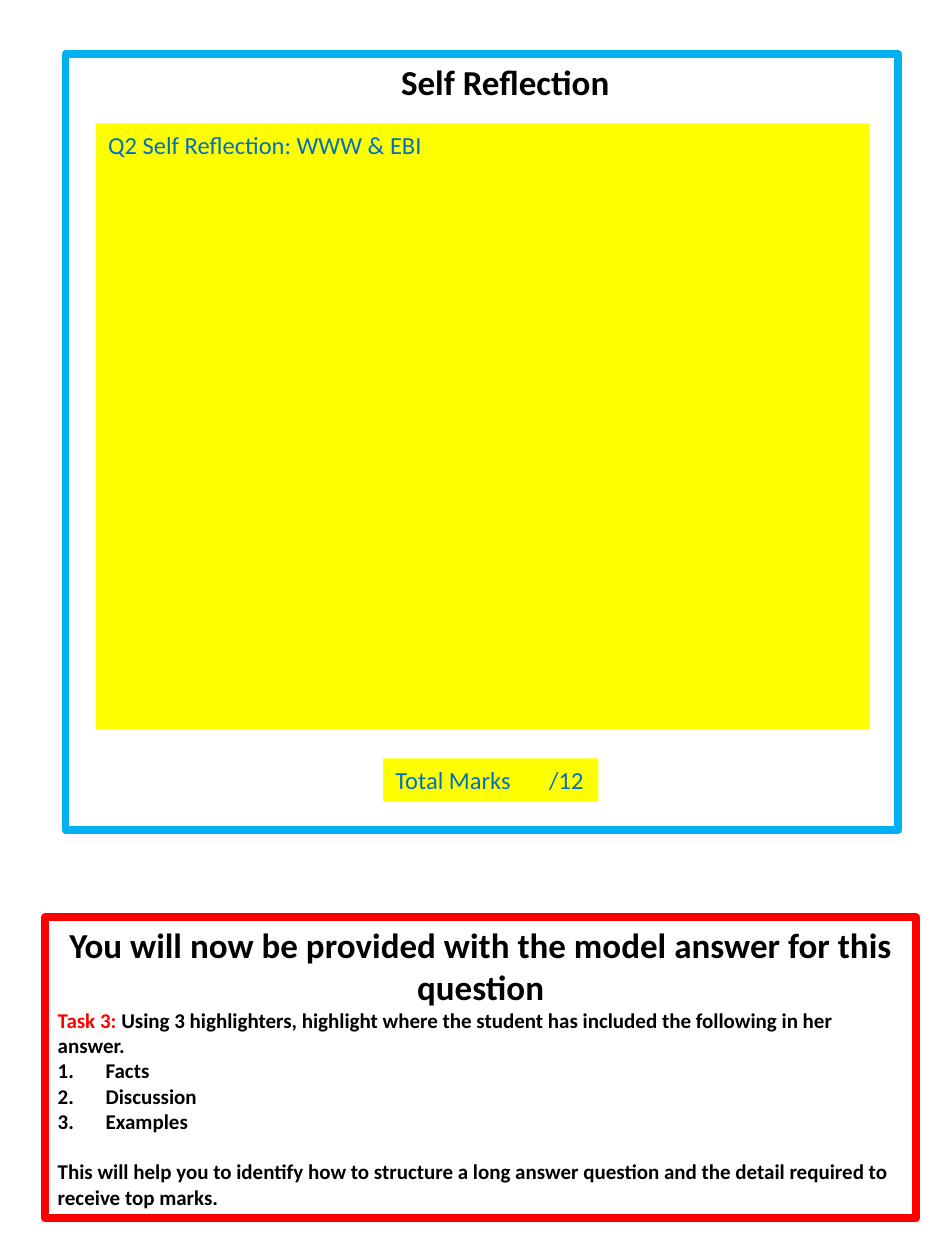
from lxml import etree
from pptx import Presentation
from pptx import util as u
from pptx.dml.color import RGBColor
from pptx.enum import text
from pptx.oxml import ns

BLACK = RGBColor(0x00, 0x00, 0x00)
RED = RGBColor(0xFF, 0x00, 0x00)
SKY = RGBColor(0x00, 0xB0, 0xF0)
BLUE = RGBColor(0x00, 0x70, 0xC0)
YELLOW = RGBColor(0xFF, 0xFF, 0x00)


class Worksheet:
    """Holds the style and the slide; places are percentages of the slide's size."""

    font = "Calibri"
    heading_size, field_size, body_size = 20, 14, 12
    border_width = 4.5

    def __init__(self, deck):
        self.width, self.height = deck.slide_width, deck.slide_height
        self.slide = deck.slides.add_slide(deck.slide_layouts[6])

    def box(self, left, top, width, height):
        area = self.slide.shapes.add_textbox(
            int(self.width * left / 100), int(self.height * top / 100),
            int(self.width * width / 100), int(self.height * height / 100))
        area.text_frame.word_wrap = True
        area.text_frame.auto_size = text.MSO_AUTO_SIZE.NONE
        return area

    def frame(self, place, color):
        area = self.box(*place)
        area.line.color.rgb = color
        area.line.width = u.Pt(self.border_width)
        return area.text_frame

    def style(self, run, size, color, bold):
        run.font.name = self.font
        run.font.size = u.Pt(size)
        run.font.color.rgb = color
        run.font.bold = bold

    def heading(self, paragraph, words, indent=0):
        paragraph.text = words
        paragraph.alignment = text.PP_ALIGN.CENTER
        paragraph._p.get_or_add_pPr().set("marL", str(u.Inches(indent)))
        self.style(paragraph.runs[0], self.heading_size, BLACK, True)

    def body(self, frame, words, lead="", gap=0):
        paragraph = frame.add_paragraph()
        paragraph.space_before = u.Pt(gap)
        for part, color in ((lead, RED), (words, BLACK)):
            if part:
                run = paragraph.add_run()
                run.text = part
                self.style(run, self.body_size, color, True)
        return paragraph

    def numbered(self, frame, words):
        properties = self.body(frame, words)._p.get_or_add_pPr()
        properties.set("marL", str(u.Inches(0.38)))
        properties.set("indent", str(u.Inches(-0.38)))
        font = etree.SubElement(properties, ns.qn("a:buFont"))
        font.set("typeface", "+mj-lt")
        number = etree.SubElement(properties, ns.qn("a:buAutoNum"))
        number.set("type", "arabicPeriod")

    def field(self, place, words, tab=None):
        area = self.box(*place)
        area.fill.solid()
        area.fill.fore_color.rgb = YELLOW
        paragraph = area.text_frame.paragraphs[0]
        paragraph.text = words
        self.style(paragraph.runs[0], self.field_size, BLUE, False)
        if tab:
            tabs = etree.SubElement(paragraph._p.get_or_add_pPr(), ns.qn("a:tabLst"))
            stop = etree.SubElement(tabs, ns.qn("a:tab"))
            stop.set("pos", str(u.Inches(tab)))
            stop.set("algn", "l")


def main():
    deck = Presentation()
    deck.slide_width, deck.slide_height = u.Inches(7.5), u.Inches(10)
    sheet = Worksheet(deck)

    reflection = sheet.frame((6.93, 4.3, 88.13, 61.6), SKY)
    sheet.heading(reflection.paragraphs[0], "Self Reflection", indent=0.37)
    sheet.field((10.13, 9.8, 81.87, 48.1), "Q2 Self Reflection: WWW & EBI")
    sheet.field((40.53, 60.2, 22.8, 3.4), "Total Marks\t/12", tab=1.22)

    task = sheet.frame((4.8, 72.8, 92.13, 23.9), RED)
    sheet.heading(task.paragraphs[0],
                  "You will now be provided with the model answer for this question")
    sheet.body(task, "Using 3 highlighters, highlight where the student has included "
                     "the following in her answer.", lead="Task 3: ")
    for feature in ("Facts", "Discussion", "Examples"):
        sheet.numbered(task, feature)
    sheet.body(task, "This will help you to identify how to structure a long answer "
                     "question and the detail required to receive top marks.", gap=14.5)

    deck.save("out.pptx")


if __name__ == "__main__":
    main()
